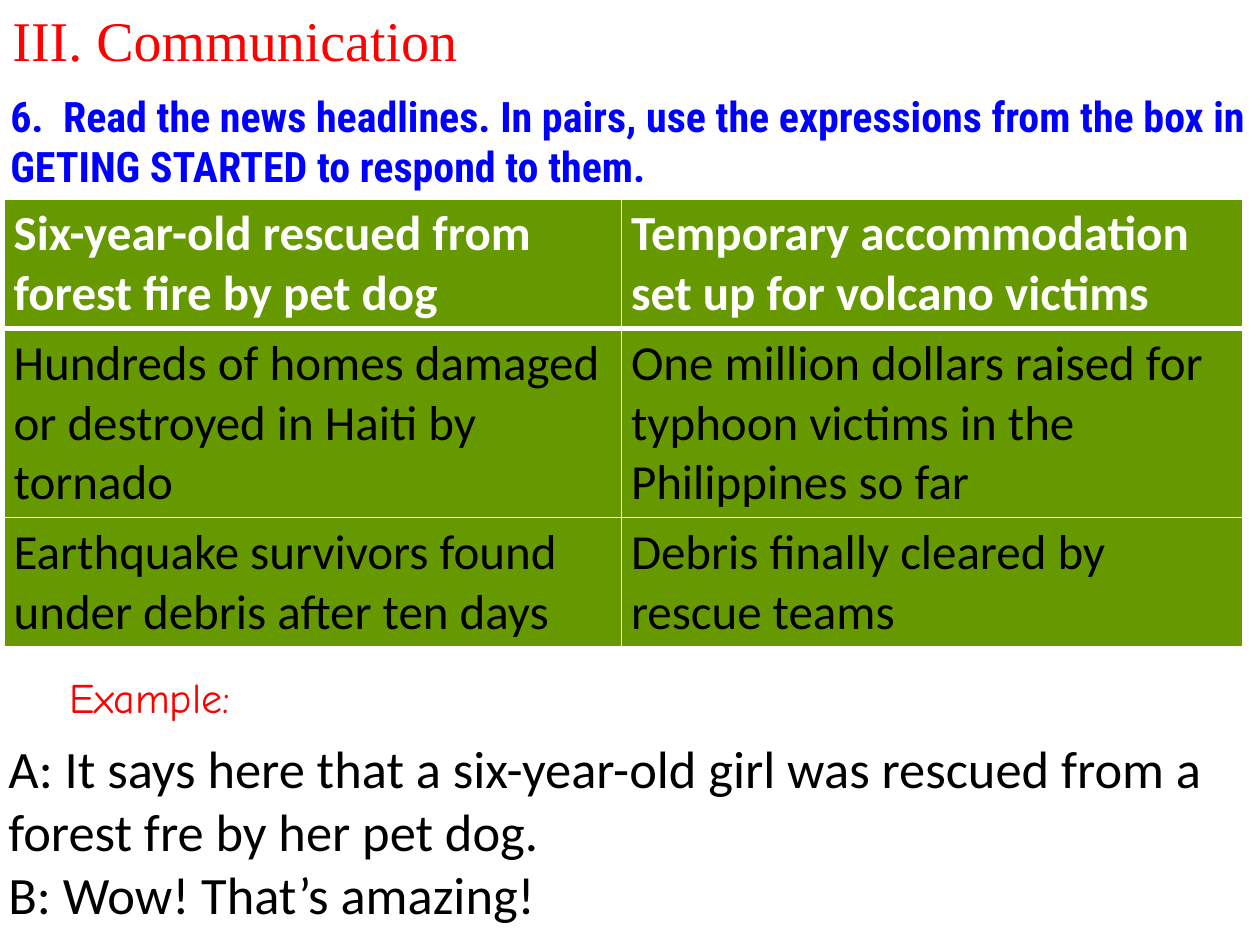
from pptx import Presentation
from pptx.dml.color import RGBColor
from pptx.enum.text import MSO_ANCHOR, MSO_AUTO_SIZE
from pptx.oxml.ns import qn
from pptx.util import Pt
from lxml.etree import SubElement

# Content
TITLE = "III. Communication"
TASK = ("6.  Read the news headlines. In pairs, use the expressions "
        "from the box in GETING STARTED to respond to them.")
HEADLINES = [
    ("Six-year-old rescued from forest fire by pet dog",
     "Temporary accommodation set up for volcano victims"),
    ("Hundreds of homes damaged or destroyed in Haiti by tornado",
     "One million dollars raised for typhoon victims in the Philippines so far"),
    ("Earthquake survivors found under debris after ten days",
     "Debris finally cleared by rescue teams"),
]
EXAMPLE = "Example:"
DIALOGUE = [
    "A: It says here that a six-year-old girl was rescued from a forest fre by her pet dog.",
    "B: Wow! That’s amazing!",
]

RED, BLUE, GREEN, WHITE, BLACK = "FF0000", "0000FF", "669900", "FFFFFF", "000000"
COLUMN_WIDTHS = (352.8, 355)
ROW_HEIGHTS = (74, 108, 74)


def color(value):
    return RGBColor.from_string(value)


def write(frame, lines, size=28, font="Calibri", fill=BLACK, bold=False):
    """Fill a text frame with one paragraph per line."""
    for index, line in enumerate(lines):
        para = frame.paragraphs[0] if index == 0 else frame.add_paragraph()
        span = para.add_run()
        span.text = line
        span.font.size = Pt(size)
        span.font.name = font
        span.font.bold = bold
        span.font.color.rgb = color(fill)


def add_text(page, lines, place, wrap=True, anchor=MSO_ANCHOR.TOP, grow=True, **style):
    box = page.shapes.add_textbox(*(Pt(length) for length in place))
    frame = box.text_frame
    frame.word_wrap = wrap
    frame.vertical_anchor = anchor
    frame.auto_size = MSO_AUTO_SIZE.SHAPE_TO_FIT_TEXT if grow else MSO_AUTO_SIZE.NONE
    write(frame, lines, **style)


def set_borders(cell, **widths):
    """Draw white cell borders; the cell fill has to be set afterwards."""
    properties = cell._tc.get_or_add_tcPr()
    for side in ("L", "R", "T", "B"):
        line = SubElement(properties, qn(f"a:ln{side}"), w=str(Pt(widths.get(side, 1))))
        paint = SubElement(line, qn("a:solidFill"))
        SubElement(paint, qn("a:srgbClr"), val=WHITE)


def add_headlines(page):
    table = page.shapes.add_table(
        len(HEADLINES), len(COLUMN_WIDTHS), Pt(2.2), Pt(113.8),
        Pt(sum(COLUMN_WIDTHS)), Pt(sum(ROW_HEIGHTS))).table
    for column, width in zip(table.columns, COLUMN_WIDTHS):
        column.width = Pt(width)
    for index, (row, height, texts) in enumerate(zip(table.rows, ROW_HEIGHTS, HEADLINES)):
        row.height = Pt(height)
        header = index == 0
        for cell, text in zip(row.cells, texts):
            cell.margin_left = cell.margin_right = Pt(5.6)
            cell.margin_top = cell.margin_bottom = Pt(2.8)
            set_borders(cell, B=3 if header else 1, T=3 if index == 1 else 1)
            cell.fill.solid()
            cell.fill.fore_color.rgb = color(GREEN)
            write(cell.text_frame, [text], fill=WHITE if header else BLACK, bold=header)


def main():
    deck = Presentation()
    deck.slide_width, deck.slide_height = Pt(720), Pt(540)
    page = deck.slides.add_slide(deck.slide_layouts[6])

    # Heading and task
    add_text(page, [TITLE], (0, -3, 276, 50.4), anchor=MSO_ANCHOR.MIDDLE, grow=False,
             size=32, font="Times New Roman", fill=RED)
    add_text(page, [TASK], (-1.2, 48.2, 720, 65.5),
             size=24, font="Roboto Condensed", fill=BLUE, bold=True)

    # News headlines
    add_headlines(page)

    # Example dialogue
    add_text(page, [EXAMPLE], (32.4, 380.2, 115.2, 36), wrap=False,
             size=24, font="Comic Neue", fill=RED)
    add_text(page, DIALOGUE, (-2.2, 417, 720, 116.6), size=30)

    deck.save("out.pptx")


if __name__ == "__main__":
    main()
